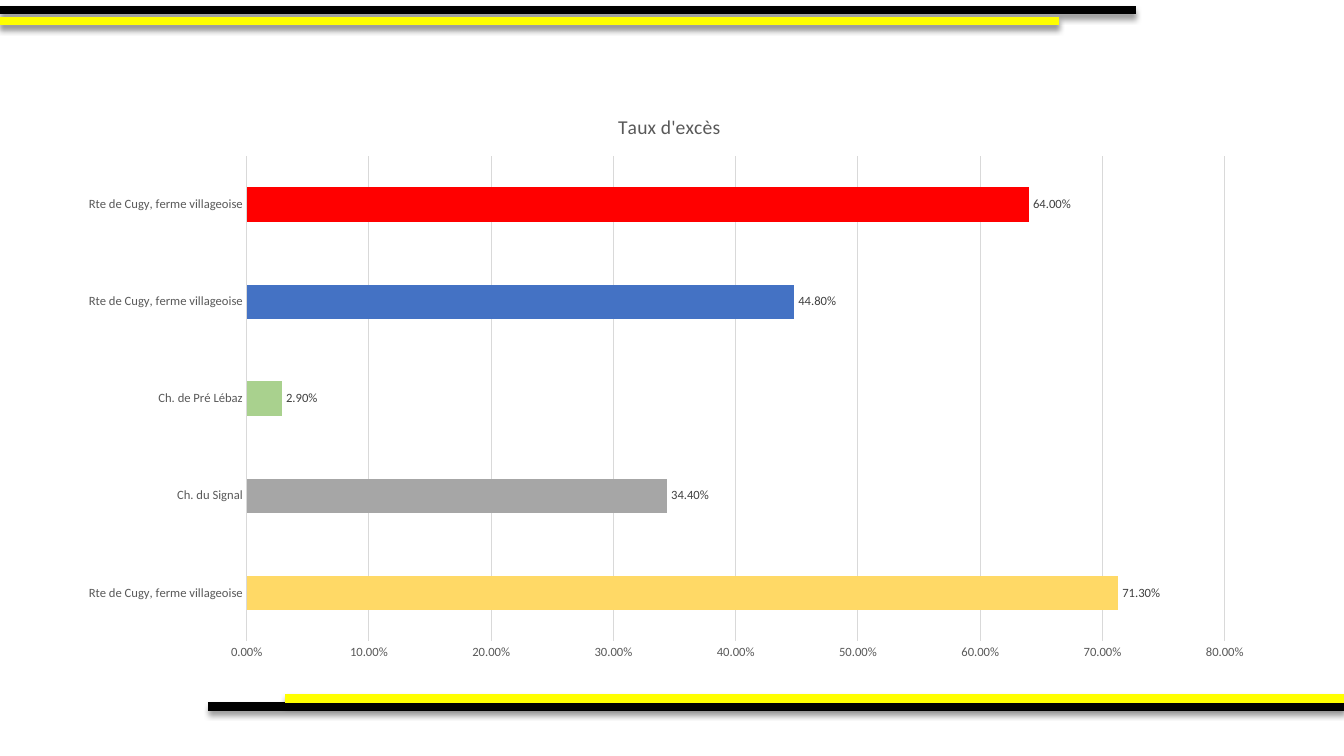
"""Build a slide with a bar chart of speeding rates between striped bands."""
from lxml import etree
from pptx import Presentation
from pptx.chart.data import CategoryChartData
from pptx.dml.color import RGBColor
from pptx.enum.chart import XL_CHART_TYPE, XL_LABEL_POSITION, XL_TICK_MARK
from pptx.enum.shapes import MSO_CONNECTOR
from pptx.oxml import parse_xml
from pptx.oxml.ns import nsdecls, qn
from pptx.util import Pt

COLORS = {
    "black": "000000", "yellow": "FFFF00", "grid": "D9D9D9",
    "text": "595959", "label": "404040", "blue": "4472C4",
    "gold": "FFD966", "grey": "A6A6A6", "green": "A9D18E", "red": "FF0000",
}
WIDTH, HEIGHT = 960, 540
FONT = "Calibri"
PERCENT = "0.00%"
BANDS = [
    ("black", 148.5, WIDTH, 504.7),
    ("yellow", 203.8, WIDTH, 499),
    ("black", 0, 811.5, 7.2),
    ("yellow", 0, 756.2, 15.1),
]
RATES = [
    ("Rte de Cugy, ferme villageoise", 0.713, "gold"),
    ("Ch. du Signal", 0.344, "grey"),
    ("Ch. de Pré Lébaz", 0.029, "green"),
    ("Rte de Cugy, ferme villageoise", 0.448, "blue"),
    ("Rte de Cugy, ferme villageoise", 0.64, "red"),
]
PLOT_AREA = {"x": 0.15, "y": 0.11, "w": 0.81, "h": 0.84}


def rgb(name):
    return RGBColor.from_string(COLORS[name])


def style_font(font, size, color):
    font.name = FONT
    font.size = Pt(size)
    font.bold = False
    font.color.rgb = rgb(color)


def style_line(line, color, width):
    line.color.rgb = rgb(color)
    line.width = Pt(width)


def add_band(s, color, left, right, y):
    band = s.shapes.add_connector(
        MSO_CONNECTOR.STRAIGHT, Pt(left), Pt(y), Pt(right), Pt(y))
    style_line(band.line, color, 6)
    band._element.spPr.append(parse_xml(
        f'<a:effectLst {nsdecls("a")}>'
        f'<a:outerShdw blurRad="{Pt(4)}" dist="{Pt(3)}" dir="5400000" rotWithShape="0">'
        f'<a:srgbClr val="{COLORS["black"]}"><a:alpha val="40000"/></a:srgbClr>'
        '</a:outerShdw></a:effectLst>'))


def set_plot_area(chart):
    plot_area = chart._chartSpace.chart.plotArea
    for old in plot_area.findall(qn("c:layout")):
        plot_area.remove(old)
    layout = etree.Element(qn("c:layout"))
    manual = etree.SubElement(layout, qn("c:manualLayout"))
    settings = {"layoutTarget": "inner", "xMode": "edge", "yMode": "edge", **PLOT_AREA}
    for tag, value in settings.items():
        etree.SubElement(manual, qn(f"c:{tag}")).set("val", str(value))
    plot_area.insert(0, layout)


def style_axes(chart):
    for axis in (chart.category_axis, chart.value_axis):
        axis.major_tick_mark = XL_TICK_MARK.NONE
        axis.minor_tick_mark = XL_TICK_MARK.NONE
        style_font(axis.tick_labels.font, 9, "text")
    style_line(chart.category_axis.format.line, "grid", 0.75)
    axis = chart.value_axis
    axis.minimum_scale, axis.maximum_scale, axis.major_unit = 0, 0.8, 0.1
    axis.format.line.fill.background()
    axis.has_major_gridlines = True
    style_line(axis.major_gridlines.format.line, "grid", 0.75)
    axis.tick_labels.number_format = PERCENT
    axis.tick_labels.number_format_is_linked = False


def style_bars(plot):
    plot.gap_width = 182
    plot.vary_by_categories = False
    series = plot.series[0]
    series.invert_if_negative = False
    series.format.fill.solid()
    series.format.fill.fore_color.rgb = rgb("blue")
    for i, (_, _, color) in enumerate(RATES):
        fill = series.points[i].format.fill
        fill.solid()
        fill.fore_color.rgb = rgb(color)
    labels = series.data_labels
    labels.show_value = True
    labels.position = XL_LABEL_POSITION.OUTSIDE_END
    labels.number_format = PERCENT
    labels.number_format_is_linked = False
    style_font(labels.font, 9, "label")


def add_rate_chart(s):
    data = CategoryChartData(number_format=PERCENT)
    data.categories = [place for place, _, _ in RATES]
    data.add_series("Taux d'excès", [rate for _, rate, _ in RATES])
    chart = s.shapes.add_chart(
        XL_CHART_TYPE.BAR_CLUSTERED, Pt(46.8), Pt(66.2), Pt(862.6), Pt(412.6), data).chart
    style_font(chart.font, 10, "black")
    chart.has_legend = False
    chart.has_title = True
    tf = chart.chart_title.text_frame
    tf.text = "Taux d'excès"
    style_font(tf.paragraphs[0].runs[0].font, 14, "text")
    chart.chart_title.include_in_layout = False
    style_axes(chart)
    style_bars(chart.plots[0])
    set_plot_area(chart)


def main():
    prs = Presentation()
    prs.slide_width, prs.slide_height = Pt(WIDTH), Pt(HEIGHT)
    s = prs.slides.add_slide(prs.slide_layouts[6])
    for band in BANDS:
        add_band(s, *band)
    add_rate_chart(s)
    prs.save("out.pptx")


if __name__ == "__main__":
    main()
